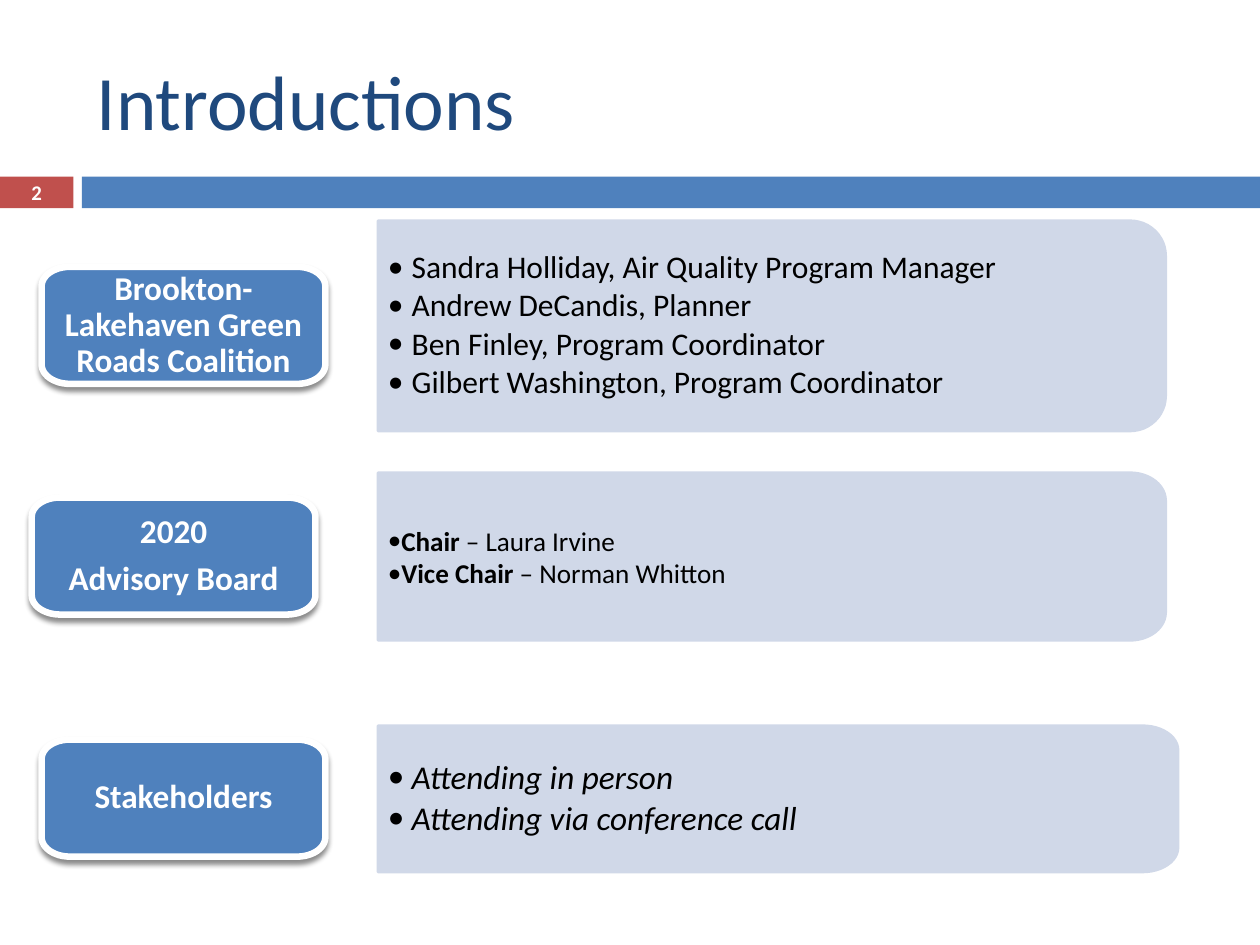
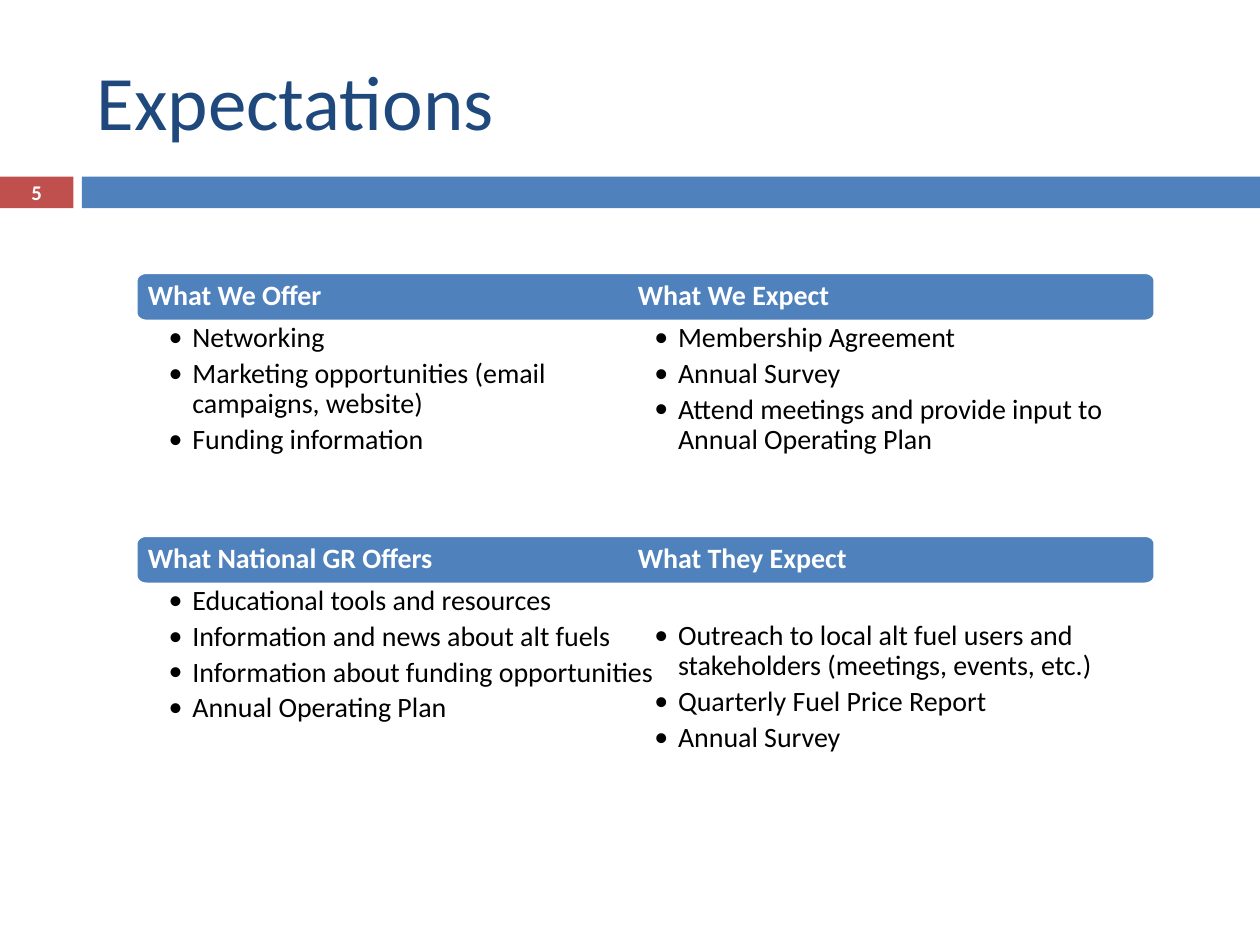
from dataclasses import dataclass, replace
from math import cos, pi, sin

from lxml import etree
from pptx import Presentation
from pptx.dml.color import RGBColor
from pptx.enum.shapes import MSO_SHAPE
from pptx.enum.text import MSO_ANCHOR, PP_ALIGN
from pptx.oxml.ns import qn
from pptx.util import Cm, Pt

RECT = MSO_SHAPE.RECTANGLE
MIDDLE, TOP = MSO_ANCHOR.MIDDLE, MSO_ANCHOR.TOP
LEFT, CENTER = PP_ALIGN.LEFT, PP_ALIGN.CENTER

FONT = "Calibri"
COLORS = {
    "title": "1F497D",
    "blue": "4F81BD",
    "red": "C0504D",
    "pale": "D0D8E8",
    "white": "FFFFFF",
    "black": "000000",
}


@dataclass(frozen=True)
class Style:
    size: float
    color: str = "black"
    bold: bool = False
    italic: bool = False
    align: PP_ALIGN = LEFT
    spacing: float = 0.9
    after: float = 0
    bullet: bool = False
    indent: float = 0
    tab: float = 0


@dataclass(frozen=True)
class Box:
    left: float
    top: float
    width: float
    height: float


@dataclass(frozen=True)
class Group:
    tag: Box
    name: tuple
    panel: Box
    lines: tuple
    style: Style


@dataclass(frozen=True)
class Block:
    top: float
    heads: tuple
    offers: tuple
    asks: tuple
    drop: float = 0


TITLE = Style(44, "title", spacing=1)
NUMBER = Style(11.9, "white", bold=True, align=CENTER, spacing=1)
TAG = Style(19, "white", bold=True, align=CENTER, after=6.6)
TEAM = Style(18, after=2.5, bullet=True, indent=0.48)
BOARD = Style(15.5, spacing=1, bullet=True)
GUESTS = replace(TEAM, size=19, italic=True, after=2.8)
HEAD = Style(16, "white", bold=True, tab=9.88)
ITEM = replace(TEAM, size=16, after=3.2)

TAG_W, TAG_H = 5.72, 2.36
PANEL_X, PANEL_W = 7.62, 15.88
HEAD_X, HEAD_W, HEAD_H = 2.75, 20.53, 0.97
LIST_X, LIST_W, LIST_H = 3.4, 9.79, 2.64

GROUPS = (
    Group(Box(0.84, 5.38, TAG_W, TAG_H),
          ("Brookton-Lakehaven Green Roads Coalition",),
          Box(PANEL_X, 4.45, PANEL_W, 4.24),
          ("Sandra Holliday, Air Quality Program Manager",
           "Andrew DeCandis, Planner",
           "Ben Finley, Program Coordinator",
           "Gilbert Washington, Program Coordinator"), TEAM),
    Group(Box(0.64, 10.03, TAG_W, TAG_H),
          ("2020", "Advisory Board"),
          Box(PANEL_X, 9.53, PANEL_W, 3.38),
          (("Chair", " – Laura Irvine"),
           ("Vice Chair ", "– Norman Whitton")), BOARD),
    Group(Box(0.84, 14.91, TAG_W, TAG_H),
          ("Stakeholders",),
          Box(PANEL_X, 14.63, 16.13, 2.95),
          ("Attending in person", "Attending via conference call"), GUESTS),
)

BLOCKS = (
    Block(5.5, ("What We Offer", "What We Expect"),
          ("Networking",
           "Marketing opportunities (email campaigns, website)",
           "Funding information"),
          ("Membership Agreement", "Annual Survey",
           "Attend meetings and provide input to Annual Operating Plan")),
    Block(10.8, ("What National GR Offers", "What They Expect"),
          ("Educational tools and resources",
           "Information and news about alt fuels",
           "Information about funding opportunities",
           "Annual Operating Plan"),
          ("Outreach to local alt fuel users and stakeholders "
           "(meetings, events, etc.)",
           "Quarterly Fuel Price Report", "Annual Survey"), drop=0.71),
)


def rgb(name: str) -> RGBColor:
    return RGBColor.from_string(COLORS[name])


def sub(parent, tag: str, **attrs):
    return etree.SubElement(parent, qn(tag), attrs)


def place(box: Box) -> tuple:
    return Cm(box.left), Cm(box.top), Cm(box.width), Cm(box.height)


def write(shape, lines: tuple, style: Style, pad: tuple, anchor=MIDDLE) -> None:
    """Fill a shape with lines; a tuple as line is a bold lead and its rest."""
    frame = shape.text_frame
    frame.word_wrap = True
    frame.vertical_anchor = anchor
    frame.margin_left, frame.margin_top, frame.margin_right, \
        frame.margin_bottom = map(Cm, pad)
    for i, line in enumerate(lines):
        para = frame.add_paragraph() if i else frame.paragraphs[0]
        para.alignment = style.align
        para.line_spacing = style.spacing
        para.space_before = Pt(0)
        para.space_after = Pt(style.after)
        split = isinstance(line, tuple)
        for j, part in enumerate(line if split else (line,)):
            run = para.add_run()
            run.text = part
            font = run.font
            font.name, font.size = FONT, Pt(style.size)
            font.bold = j == 0 if split else style.bold
            font.italic = style.italic
            font.color.rgb = rgb(style.color)
        props = para._p.get_or_add_pPr()
        if style.bullet:
            props.set("marL", str(Cm(style.indent)))
            props.set("indent", str(-Cm(style.indent)))
            sub(props, "a:buFont", typeface=FONT)
            sub(props, "a:buChar", char="•")
        if style.tab:
            stops = sub(props, "a:tabLst")
            sub(stops, "a:tab", pos=str(Cm(style.tab)), algn="l")


def paint(shape, fill: str, line: str = "", width: float = 0) -> None:
    shape.shadow.inherit = False
    shape.fill.solid()
    shape.fill.fore_color.rgb = rgb(fill)
    if line:
        shape.line.color.rgb = rgb(line)
        shape.line.width = Pt(width)
    else:
        shape.line.fill.background()


def curve(slide, box: Box, rx: float, ry: float, square: bool = False):
    """Outline with elliptical corners; square keeps the left ones sharp."""
    right, low = box.left + box.width, box.top + box.height
    corners = (
        (right, box.top, -1, 1, -pi / 2),
        (right, low, -1, -1, 0),
        (box.left, low, 1, -1, pi / 2),
        (box.left, box.top, 1, 1, pi),
    )
    points = []
    for x, y, dx, dy, start in corners:
        if square and x == box.left:
            points.append((Cm(x), Cm(y)))
            continue
        for step in range(13):
            turn = start + step * pi / 24
            points.append((Cm(x + rx * (dx + cos(turn))),
                           Cm(y + ry * (dy + sin(turn)))))
    pen = slide.shapes.build_freeform(*points[0])
    pen.add_line_segments(points[1:], close=True)
    return pen.convert_to_shape()


def cast(shape) -> None:
    """Drop a soft shadow below the shape."""
    effects = shape._element.spPr.find(qn("a:effectLst"))
    shade = sub(effects, "a:outerShdw", blurRad=str(Pt(3)), dist=str(Pt(2.4)),
                dir="5400000", algn="ctr", rotWithShape="0")
    color = sub(shade, "a:srgbClr", val=COLORS["black"])
    sub(color, "a:alpha", val="45000")


def start(deck, title: str, number: str):
    """Add a slide with its title, band and number."""
    slide = deck.slides.add_slide(deck.slide_layouts[5])
    head = slide.shapes.title
    head.left, head.top, head.width, head.height = place(
        Box(1.7, 0.64, 22.66, 2.74))
    write(head, (title,), TITLE, (0.25, 0.13, 0.25, 0.13))
    badge = slide.shapes.add_shape(RECT, *place(Box(0, 3.56, 1.48, 0.64)))
    paint(badge, "red")
    write(badge, (number,), NUMBER, (0, 0, 0, 0))
    band = slide.shapes.add_shape(RECT, *place(Box(1.65, 3.56, 23.75, 0.64)))
    paint(band, "blue")
    return slide


def draw_group(slide, group: Group) -> None:
    panel = curve(slide, group.panel, 0.72, group.panel.height / 6, True)
    paint(panel, "pale", "pale", 1.5)
    write(panel, group.lines, group.style, (0.2, 0.25, 0.36, 0.25))
    tag = curve(slide, group.tag, 0.57, 0.39)
    paint(tag, "blue", "white", 3.75)
    cast(tag)
    write(tag, group.name, TAG, (0.38, 0.28, 0.38, 0.28))


def draw_block(slide, block: Block) -> None:
    bar = curve(slide, Box(HEAD_X, block.top, HEAD_W, HEAD_H), 0.2, 0.16)
    paint(bar, "blue", "white", 1.5)
    write(bar, ("\t".join(block.heads),), HEAD, (0.23,) * 4)
    columns = ((block.offers, 0), (block.asks, block.drop))
    for i, (lines, drop) in enumerate(columns):
        box = Box(LIST_X + i * LIST_W, block.top + HEAD_H + drop,
                  LIST_W, LIST_H)
        text = slide.shapes.add_textbox(*place(box))
        write(text, lines, ITEM, (0, 0.05, 0, 0.05), TOP)


def main() -> None:
    deck = Presentation()
    deck.slide_width, deck.slide_height = Cm(25.4), Cm(19.05)
    slide = start(deck, "Introductions", "2")
    for group in GROUPS:
        draw_group(slide, group)
    slide = start(deck, "Expectations", "5")
    for block in BLOCKS:
        draw_block(slide, block)
    deck.save("out.pptx")


if __name__ == "__main__":
    main()
